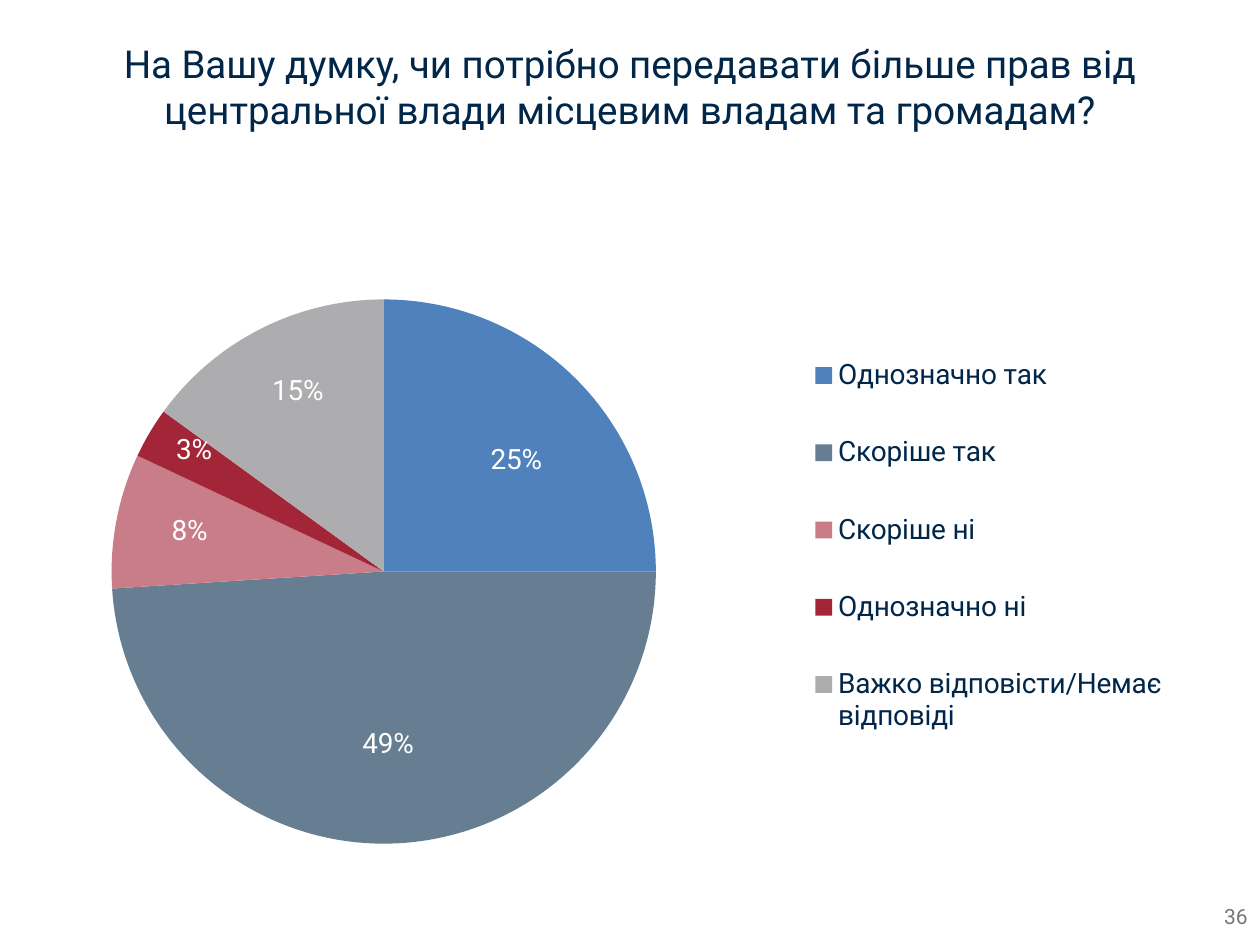
from copy import deepcopy
from dataclasses import dataclass

from pptx import Presentation
from pptx.chart.data import CategoryChartData
from pptx.dml.color import RGBColor
from pptx.enum.chart import XL_CHART_TYPE, XL_LABEL_POSITION, XL_LEGEND_POSITION
from pptx.enum.text import MSO_ANCHOR, PP_ALIGN
from pptx.oxml import parse_xml
from pptx.oxml.ns import nsdecls, qn
from pptx.util import Inches, Pt

FONT = "Roboto"
NAVY = "002649"


@dataclass
class Answer:
    name: str
    percent: int
    color: str
    label_shift: tuple[float, float]  # share of chart width and height


ANSWERS = [
    Answer("Однозначно так", 25, "4F81BD", (0.03, -0.02)),
    Answer("Скорiше так", 49, "667D92", (0, 0.05)),
    Answer("Скорiше нi", 8, "C87D88", (-0.05, -0.02)),
    Answer("Однозначно нi", 3, "A32638", (-0.06, -0.07)),
    Answer("Важко вiдповiсти/Немає вiдповiдi", 15, "ADADB0", (-0.02, -0.08)),
]


def rgb(color: str) -> RGBColor:
    return RGBColor.from_string(color)


def style_font(font, size: float, color: str) -> None:
    font.name, font.size = FONT, Pt(size)
    font.color.rgb = rgb(color)


def write_text(shape, text: str, size: float, color: str, align) -> None:
    frame = shape.text_frame
    frame.word_wrap = True
    frame.vertical_anchor = MSO_ANCHOR.MIDDLE
    paragraph = frame.paragraphs[0]
    paragraph.alignment = align
    run = paragraph.add_run()
    run.text = text
    style_font(run.font, size, color)


def layout_xml(x: float, y: float, size=None, inner: bool = False) -> str:
    target = '<c:layoutTarget val="inner"/>' if inner else ""
    modes, extent = "", ""
    if size:
        modes = '<c:xMode val="edge"/><c:yMode val="edge"/>'
        extent = f'<c:w val="{size[0]}"/><c:h val="{size[1]}"/>'
    return (f'<c:layout {nsdecls("c")}><c:manualLayout>{target}{modes}'
            f'<c:x val="{x}"/><c:y val="{y}"/>{extent}</c:manualLayout></c:layout>')


def set_layout(element, xml: str, after: str = "") -> None:
    """Replace the layout of a chart part."""
    for old in element.findall(qn("c:layout")):
        element.remove(old)
    position = list(element).index(element.find(qn(after))) + 1 if after else 0
    element.insert(position, parse_xml(xml))


def shift_label(labels, index: int, answer: Answer) -> None:
    """Move one percentage label away from the middle of its slice."""
    label = parse_xml(f'<c:dLbl {nsdecls("c")}><c:idx val="{index}"/></c:dLbl>')
    label.append(parse_xml(layout_xml(*answer.label_shift)))
    for part in labels:
        if part.tag not in (qn("c:dLbl"), qn("c:showLeaderLines")):
            label.append(deepcopy(part))
    labels.insert(index, label)


def add_answer_pie(slide, answers: list[Answer]) -> None:
    data = CategoryChartData(number_format="0")
    data.categories = [answer.name for answer in answers]
    data.add_series("Series 1", [answer.percent for answer in answers])
    chart = slide.shapes.add_chart(
        XL_CHART_TYPE.PIE, Inches(0.31), Inches(1.5), Inches(9.6), Inches(5.84), data
    ).chart
    chart.has_title = False
    style_font(chart.font, 10, "000000")
    plot = chart.plots[0]
    plot.vary_by_categories = True
    series = plot.series[0]

    # Percentage labels
    labels = series.data_labels
    labels.show_value = False
    labels.show_percentage = True
    labels.number_format = "0%"
    labels.number_format_is_linked = False
    labels.position = XL_LABEL_POSITION.CENTER
    style_font(labels.font, 16, "FFFFFF")
    label_list = series._element.find(qn("c:dLbls"))

    # Slices
    for index, answer in enumerate(answers):
        fill = series.points[index].format.fill
        fill.solid()
        fill.fore_color.rgb = rgb(answer.color)
        shift_label(label_list, index, answer)

    # Legend beside the pie
    chart.has_legend = True
    legend = chart.legend
    legend.position = XL_LEGEND_POSITION.RIGHT
    legend.include_in_layout = False
    style_font(legend.font, 16, NAVY)
    set_layout(legend._element, layout_xml(0.63, 0.17, (0.31, 0.63)), "c:legendPos")
    plot_area = chart._chartSpace.chart.plotArea
    set_layout(plot_area, layout_xml(0.06, 0.15, (0.45, 0.74), inner=True))


def main() -> None:
    presentation = Presentation()
    presentation.slide_width, presentation.slide_height = Inches(10), Inches(7.5)
    slide = presentation.slides.add_slide(presentation.slide_layouts[5])

    # Question
    question = slide.shapes.title
    question.left, question.top = Inches(0.31), Inches(0.52)
    question.width, question.height = Inches(9.38), Inches(0.33)
    write_text(question, "На Вашу думку, чи потрібно передавати більше прав від "
               "центральної влади місцевим владам та громадам?", 22, NAVY, PP_ALIGN.CENTER)

    add_answer_pie(slide, ANSWERS)

    # Page number
    page_number = slide.shapes.add_textbox(
        Inches(7.75), Inches(7.07), Inches(2.25), Inches(0.4))
    write_text(page_number, "36", 12, "77787B", PP_ALIGN.RIGHT)

    presentation.save("out.pptx")


if __name__ == "__main__":
    main()
